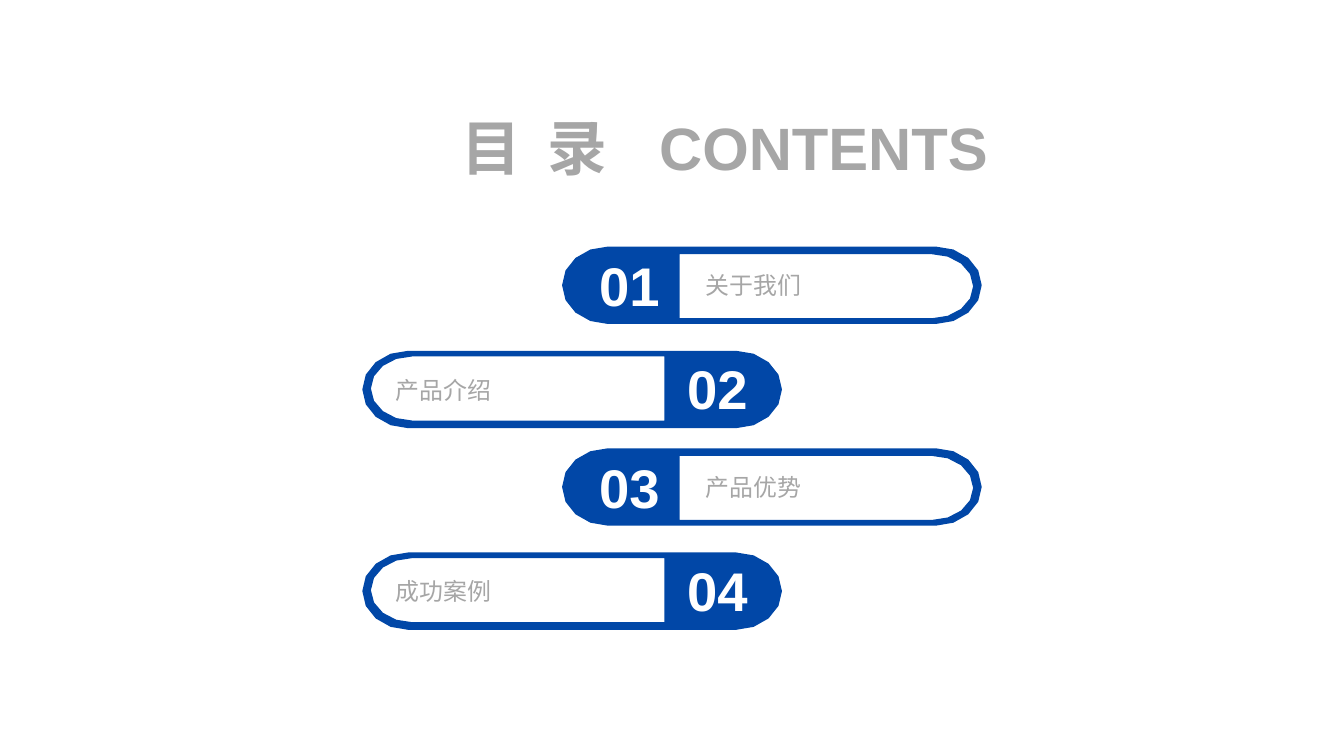
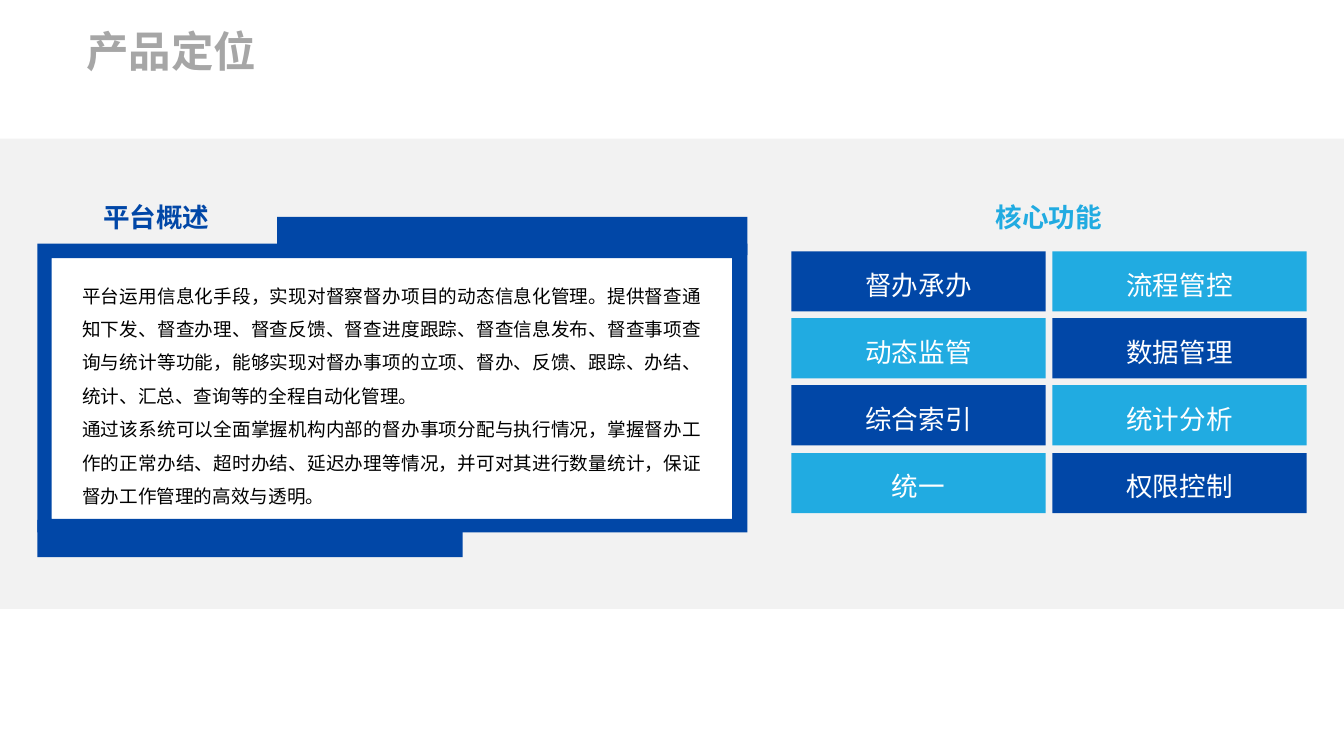
from dataclasses import dataclass
from math import cos, pi, sin

from pptx import Presentation
from pptx.dml.color import RGBColor
from pptx.enum.shapes import MSO_SHAPE
from pptx.enum.text import MSO_ANCHOR, MSO_AUTO_SIZE, PP_ALIGN
from pptx.oxml.ns import qn
from pptx.util import Pt

PX = 9144  # EMU in one px, at 100 px to the inch
RECT = MSO_SHAPE.RECTANGLE
TOP, MIDDLE = MSO_ANCHOR.TOP, MSO_ANCHOR.MIDDLE
LEFT, CENTER, JUSTIFY = PP_ALIGN.LEFT, PP_ALIGN.CENTER, PP_ALIGN.JUSTIFY
FIXED = MSO_AUTO_SIZE.NONE


@dataclass(frozen=True)
class Theme:
    font: str = "Arial"
    blue: RGBColor = RGBColor(0x01, 0x47, 0xA7)
    navy: RGBColor = RGBColor(0x01, 0x35, 0x7C)
    sky: RGBColor = RGBColor(0x21, 0xAB, 0xE1)
    gray: RGBColor = RGBColor(0xA6, 0xA6, 0xA6)
    pale: RGBColor = RGBColor(0xF2, 0xF2, 0xF2)
    white: RGBColor = RGBColor(0xFF, 0xFF, 0xFF)
    black: RGBColor = RGBColor(0, 0, 0)
    cover: int = 45
    number: int = 41
    title: int = 32
    head: int = 20
    label: int = 18
    body: int = 14


theme = Theme()


def write(shape, lines, size, color, bold=False, align=CENTER,
          anchor=MIDDLE, inset=0, space=1.0, at=None):
    """Fill a shape with formatted paragraphs, moving it to `at` if given."""
    if at:
        for name, value in zip(("left", "top", "width", "height"), at):
            setattr(shape, name, value * PX)
    frame = shape.text_frame
    layout = dict(word_wrap=True, auto_size=FIXED, vertical_anchor=anchor,
                  margin_left=inset * PX, margin_right=0,
                  margin_top=0, margin_bottom=0)
    for name, value in layout.items():
        setattr(frame, name, value)
    for i, line in enumerate(lines):
        para = frame.add_paragraph() if i else frame.paragraphs[0]
        para.alignment, para.line_spacing = align, space
        run = para.add_run()
        run.text = line
        run.font.color.rgb = color
        for name, value in dict(name=theme.font, size=Pt(size), bold=bold).items():
            setattr(run.font, name, value)


def ring(slide, left, top, outer, inner):
    """Draw a blue outline with a hole; points are px from left and top."""
    outer, inner = ([(x * PX, y * PX) for x, y in side] for side in (outer, inner))
    pen = slide.shapes.build_freeform(*outer[0])
    pen.add_line_segments(outer[1:])
    pen.move_to(*inner[0])
    pen.add_line_segments(inner[1:])
    shape = pen.convert_to_shape(left * PX, top * PX)
    shape.shadow.inherit = False
    shape.fill.solid()
    shape.fill.fore_color.rgb = theme.blue
    shape.line.fill.background()
    return shape


deck = Presentation()
deck.slide_width, deck.slide_height = 1406 * PX, 791 * PX
plain = deck.slide_layouts[5]

# Contents
slide = deck.slides.add_slide(plain)
title = slide.shapes.title
write(title, ["目 录"], theme.cover, theme.gray, True, at=(467, 115, 184, 76))
for props in title.element.iter(qn("a:rPr")):
    props.set("spc", "450")
box = slide.shapes.add_textbox(0, 0, 0, 0)
write(box, ["CONTENTS"], theme.cover, theme.gray, True, anchor=TOP,
      at=(688, 116, 347, 76))

WIDE, STEPS = 439, 8
turns = [pi * (k / STEPS - 0.5) for k in range(STEPS + 1)]
outer = [(391 + 48 * cos(t), 40.5 + 40.5 * sin(t)) for t in turns]
outer += [(WIDE - x, 81 - y) for x, y in outer]
inner = [(123, 75), (123, 8)]
inner += [(387 + 43 * cos(t), 41.5 + 33.5 * sin(t)) for t in turns]

for i, label in enumerate(["关于我们", "产品介绍", "产品优势", "成功案例"]):
    pair, flip = divmod(i, 2)
    top = 258 + 211 * pair + 109 * flip
    left, inset, shift = (379, 35, 325) if flip else (588, 150, 24)
    sides = [[(WIDE - x, 81 - y) if flip else (x, y) for x, y in side]
             for side in (outer, inner)]
    pill = ring(slide, left, top, *sides)
    write(pill, [label], theme.label, theme.gray, align=LEFT, inset=inset)
    box = slide.shapes.add_textbox(0, 0, 0, 0)
    write(box, [f"{i + 1:02}"], theme.number, theme.white, True, anchor=TOP,
          at=(left + shift, top + 6 - flip, 93, 69))

# Product position
slide = deck.slides.add_slide(plain)
write(slide.shapes.title, ["产品定位"], theme.title, theme.gray, True,
      align=LEFT, at=(90, 26, 307, 54))

bars = [
    (0, 145, 1406, 492, theme.pale, ""),
    (47, 263, 727, 289, theme.white, ""),
    (290, 227, 492, 40, theme.blue, ""),
    (39, 544, 445, 39, theme.blue, ""),
]
cells = ["督办承办", "流程管控", "动态监管", "数据管理",
         "综合索引", "统计分析", "统一", "权限控制"]
for i, label in enumerate(cells):
    row, col = divmod(i, 2)
    fill = theme.sky if (row + col) % 2 else theme.blue
    bars.append((828 + 273 * col, 263 + 211 * row // 3, 266, 63, fill, label))
for *at, fill, label in bars:
    bar = slide.shapes.add_shape(RECT, *(n * PX for n in at))
    bar.shadow.inherit = False
    bar.fill.solid()
    bar.fill.fore_color.rgb = fill
    if fill == theme.white:
        bar.line.color.rgb, bar.line.width = theme.navy, Pt(1)
    else:
        bar.line.fill.background()
    if label:
        write(bar, [label], theme.head, theme.white, space=1.2)

story = [
    "平台运用信息化手段，实现对督察督办项目的动态信息化管理。提供督查通知下发、督查办理、"
    "督查反馈、督查进度跟踪、督查信息发布、督查事项查询与统计等功能，能够实现对督办事项的"
    "立项、督办、反馈、跟踪、办结、统计、汇总、查询等的全程自动化管理。",
    "通过该系统可以全面掌握机构内部的督办事项分配与执行情况，掌握督办工作的正常办结、"
    "超时办结、延迟办理等情况，并可对其进行数量统计，保证督办工作管理的高效与透明。",
]
box = slide.shapes.add_textbox(0, 0, 0, 0)
write(box, story, theme.body, theme.black, align=JUSTIFY, anchor=TOP,
      space=1.5, at=(86, 286, 648, 247))

ring(slide, 39, 255, [(0, 0), (743, 0), (743, 302), (0, 302)],
     [(15, 15), (15, 288), (727, 288), (727, 15)])

heads = [("平台概述", theme.blue, 93, 141), ("核心功能", theme.sky, 1023, 148)]
for text, color, left, width in heads:
    box = slide.shapes.add_textbox(0, 0, 0, 0)
    write(box, [text], theme.head, color, True, space=1.2,
          at=(left, 200, width, 48))

deck.save("out.pptx")
